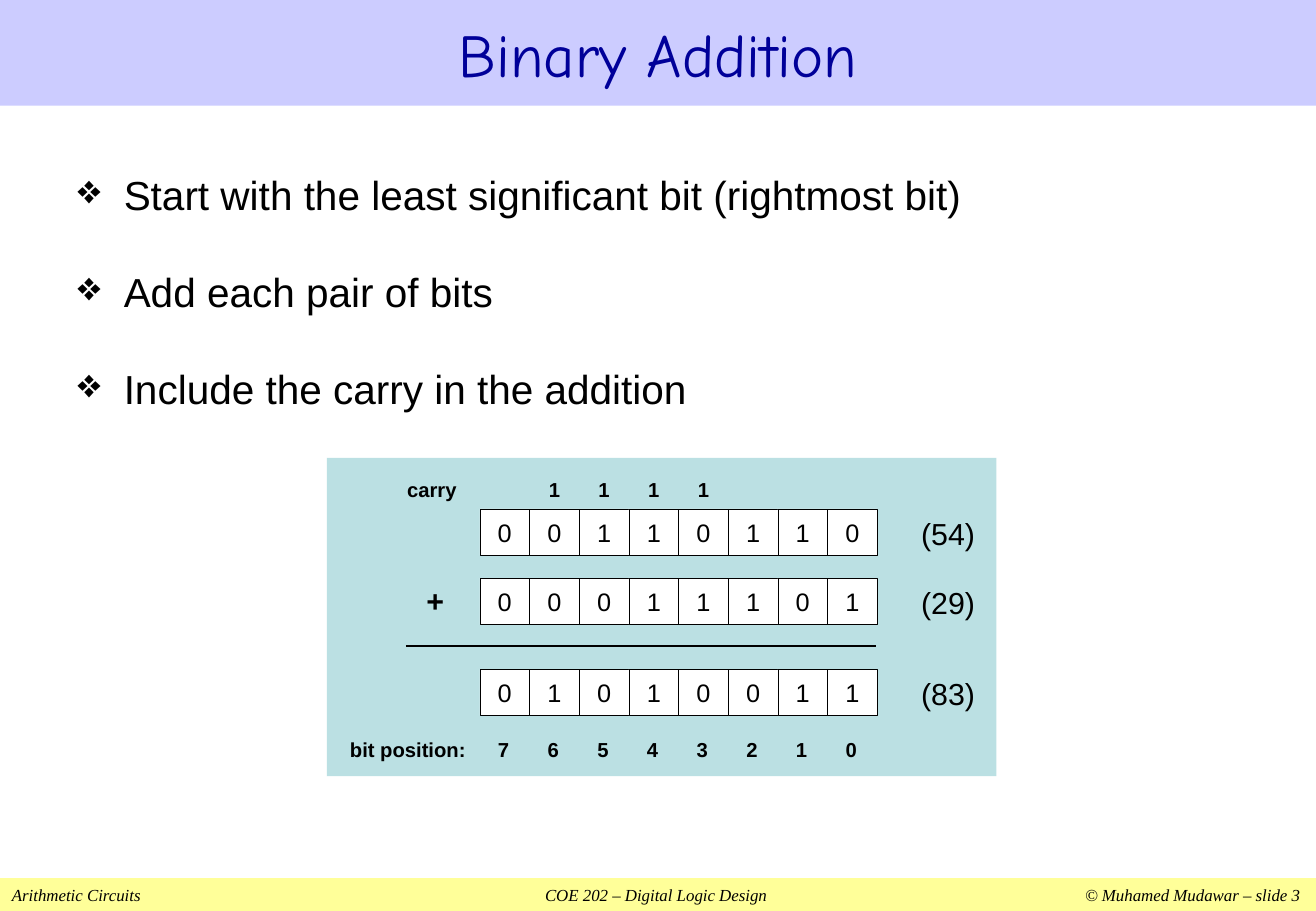
from lxml import etree
from pptx import Presentation
from pptx import util as u
from pptx.dml.color import RGBColor
from pptx.enum import shapes, text
from pptx.oxml import ns

THEME = {
    "color": {"ink": "000000", "title": "000099", "band": "CCCCFF", "footer": "FFFF99",
              "panel": "BBE0E3", "cell": "FFFFFF"},
    "font": {
        "title": {"name": "Comic Neue", "size": u.Pt(36), "bold": False},
        "body": {"name": "Arial", "size": u.Pt(24)},
        "digit": {"name": "Arial", "size": u.Pt(15)},
        "value": {"name": "Arial", "size": u.Pt(18)},
        "sign": {"name": "Arial", "size": u.Pt(18), "bold": True},
        "label": {"name": "Arial", "size": u.Pt(12), "bold": True},
        "footer": {"name": "Times New Roman", "size": u.Pt(10), "italic": True},
    },
}
COLOR = {name: RGBColor.from_string(value) for name, value in THEME["color"].items()}
LEFT, CENTER = text.PP_ALIGN.LEFT, text.PP_ALIGN.CENTER

prs = Presentation()
prs.slide_width, prs.slide_height = u.Inches(10.83), u.Inches(7.5)
s = prs.slides.add_slide(prs.slide_layouts[5])


def write(sp, lines, style, align=LEFT, color="ink", inset=0, anchor=text.MSO_ANCHOR.MIDDLE):
    tf = sp.text_frame
    frame = {"word_wrap": True, "vertical_anchor": anchor, "margin_left": u.Inches(inset),
             "margin_right": u.Inches(inset), "margin_top": u.Inches(inset / 2),
             "margin_bottom": u.Inches(inset / 2)}
    for key, value in frame.items():
        setattr(tf, key, value)
    tf.text = lines
    for p in tf.paragraphs:
        p.alignment = align
        for r in p.runs:
            r.font.color.rgb = COLOR[color]
            for key, value in THEME["font"][style].items():
                setattr(r.font, key, value)
    return tf


def box(x, y, w, h, fill, outlined=False):
    sp = s.shapes.add_shape(shapes.MSO_SHAPE.RECTANGLE, *map(u.Inches, (x, y, w, h)))
    sp.shadow.inherit = False
    sp.fill.solid()
    sp.fill.fore_color.rgb = COLOR[fill]
    if outlined:
        sp.line.color.rgb = COLOR["ink"]
        sp.line.width = u.Pt(0.38)
    else:
        sp.line.fill.background()
    return sp


title = s.shapes.title
for key, value in {"left": 0, "top": 0, "width": 10.83, "height": 0.87}.items():
    setattr(title, key, u.Inches(value))
title.fill.solid()
title.fill.fore_color.rgb = COLOR["band"]
write(title, "Binary Addition", "title", CENTER, "title", 0.1)

footer = box(0, 7.23, 10.83, 0.27, "footer")
tf = write(footer, "Arithmetic Circuits\tCOE 202 – Digital Logic Design\t© Muhamed Mudawar – slide 3",
           "footer", inset=0.1)
tabs = etree.SubElement(tf.paragraphs[0]._p.get_or_add_pPr(), ns.qn("a:tabLst"))
for stop, align in ((5.3, "ctr"), (10.6, "r")):
    etree.SubElement(tabs, ns.qn("a:tab"), pos=str(u.Inches(stop)), algn=align)

steps = ["Start with the least significant bit (rightmost bit)",
         "Add each pair of bits", "Include the carry in the addition"]
body = s.shapes.add_textbox(*map(u.Inches, (0.54, 1.23, 9.75, 2.14)))
tf = write(body, "\n".join(steps), "body", inset=0.1, anchor=text.MSO_ANCHOR.TOP)
for p in tf.paragraphs:
    p.line_spacing, p.space_before = 1.3, u.Pt(20)
    pPr = p._p.get_or_add_pPr()
    pPr.set("marL", str(u.Inches(0.38)))
    pPr.set("indent", str(u.Inches(-0.38)))
    etree.SubElement(pPr, ns.qn("a:buChar"), char="❖")

box(2.69, 3.77, 5.51, 2.62, "panel")

GRID_LEFT, GRID_RIGHT, BITS = 3.95, 7.22, 8
step = (GRID_RIGHT - GRID_LEFT) / BITS
columns = [GRID_LEFT + step * i for i in range(BITS)]

labels = [(3.35, 3.93, 0.55, 0.2, "carry", "label", LEFT),
          (2.88, 6.07, 1.05, 0.2, "bit position:", "label", LEFT),
          (3.51, 4.79, 0.3, 0.3, "+", "sign", LEFT)]

for y, bits, value in ((4.19, "00110110", "(54)"), (4.76, "00011101", "(29)"),
                       (5.51, "01010011", "(83)")):
    for x, bit in zip(columns, bits):
        write(box(x, y, step, 0.38, "cell", True), bit, "digit", CENTER)
    labels.append((7.58, y + 0.05, 0.6, 0.3, value, "value", LEFT))

for x in columns[1:5]:
    labels.append((x, 3.93, step, 0.2, "1", "label", CENTER))
for i, x in enumerate(columns):
    labels.append((x - 0.01, 6.07, step, 0.2, str(BITS - 1 - i), "label", CENTER))

for *place, words, style, align in labels:
    write(s.shapes.add_textbox(*map(u.Inches, place)), words, style, align)

rule = s.shapes.add_connector(shapes.MSO_CONNECTOR.STRAIGHT, *map(u.Inches, (3.34, 5.32, 7.21, 5.32)))
rule.line.color.rgb = COLOR["ink"]
rule.line.width = u.Pt(1.13)
etree.SubElement(rule._element.spPr, ns.qn("a:effectLst"))

prs.save("out.pptx")
